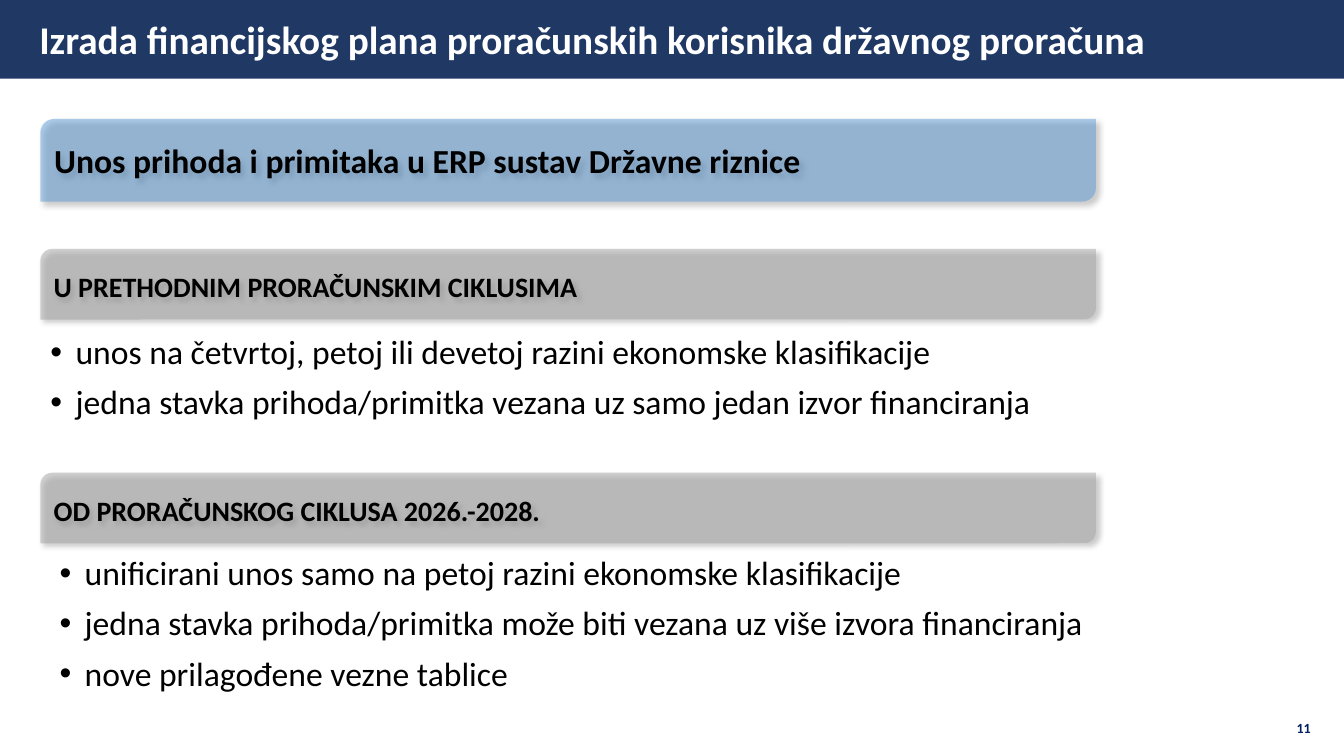
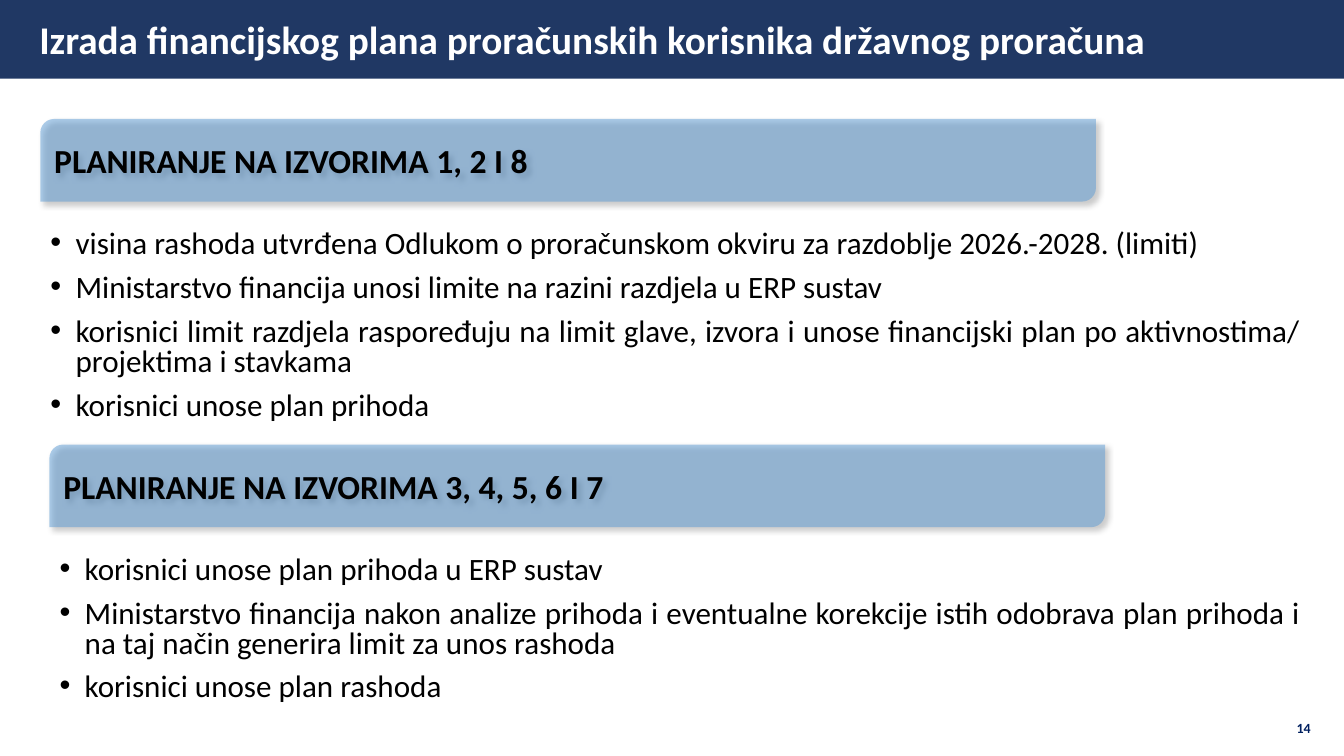
from dataclasses import dataclass

from lxml import etree
from pptx import Presentation
from pptx.dml.color import RGBColor
from pptx.enum.shapes import MSO_SHAPE
from pptx.enum.text import MSO_ANCHOR, MSO_AUTO_SIZE, PP_ALIGN
from pptx.oxml.ns import qn
from pptx.util import Inches, Pt

DIAG = MSO_SHAPE.ROUND_2_DIAG_RECTANGLE
LEFT, JUSTIFY = PP_ALIGN.LEFT, PP_ALIGN.JUSTIFY
MIDDLE, TOP = MSO_ANCHOR.MIDDLE, MSO_ANCHOR.TOP
FIXED = MSO_AUTO_SIZE.NONE
TWO_LISTS = 3


@dataclass(frozen=True)
class Theme:
    font: str = "Calibri"
    navy: str = "203864"
    page: str = "002060"
    blue: str = "5B9BD5"
    grey: str = "A5A5A5"
    white: str = "FFFFFF"
    black: str = "000000"
    title_size: float = 28
    head_size: float = 24
    sub_size: float = 20
    list_size: float = 24
    tight_size: float = 22.2
    page_size: float = 10


TITLE = "Izrada financijskog plana proračunskih korisnika državnog proračuna"


class Deck:
    def __init__(self, theme):
        self.theme = theme
        self.prs = Presentation()
        self.prs.slide_width = Inches(13.33)
        self.prs.slide_height = Inches(7.5)
        self.slide = None

    def start(self, page):
        """Add a slide with its title band and page number."""
        layout = self.prs.slide_layouts[TWO_LISTS]
        self.slide = self.prs.slides.add_slide(layout)
        self.title()
        self.number(page)

    def place(self, shape, x, y, w, h):
        shape.left, shape.top = Inches(x), Inches(y)
        shape.width, shape.height = Inches(w), Inches(h)

    def paint(self, shape, color):
        shape.fill.solid()
        shape.fill.fore_color.rgb = RGBColor.from_string(color)
        shape.line.fill.background()

    def label(self, para, text, size, color, bold=False, align=LEFT, space=1.0):
        para.alignment = align
        para.line_spacing = space
        run = para.add_run()
        run.text = text
        font = run.font
        font.name, font.size, font.bold = self.theme.font, Pt(size), bold
        font.color.rgb = RGBColor.from_string(color)

    def title(self):
        t = self.theme
        band = self.slide.shapes.title
        self.place(band, 0, 0, 13.33, 0.78)
        self.paint(band, t.navy)
        frame = band.text_frame
        frame.auto_size = FIXED
        frame.vertical_anchor = MIDDLE
        frame.margin_left = Inches(0.39)
        self.label(frame.paragraphs[0], TITLE, t.title_size, t.white, bold=True)

    def number(self, page):
        t = self.theme
        box = self.slide.shapes.add_textbox(
            Inches(12.86), Inches(7.16), Inches(0.22), Inches(0.15))
        frame = box.text_frame
        frame.word_wrap = True
        frame.margin_left = frame.margin_right = 0
        frame.margin_top = frame.margin_bottom = 0
        self.label(frame.paragraphs[0], str(page), t.page_size, t.page,
                   bold=True, space=0.9)

    def bar(self, text, x, y, h, color, size, align=LEFT, space=1.0):
        """Draw a half-clear heading bar with a soft shadow."""
        shape = self.slide.shapes.add_shape(
            DIAG, Inches(x), Inches(y), Inches(10.47), Inches(h))
        self.paint(shape, color)
        tint = shape.element.spPr.find(qn("a:solidFill")).find(qn("a:srgbClr"))
        self.fade(tint, 50)
        self.shade(shape)
        frame = shape.text_frame
        frame.word_wrap = True
        frame.vertical_anchor = MIDDLE
        self.label(frame.paragraphs[0], text, size, self.theme.black,
                   bold=True, align=align, space=space)

    def head(self, text, x, y):
        self.bar(text, x, y, 0.82, self.theme.blue, self.theme.head_size)

    def sub(self, text, y):
        self.bar(text, 0.4, y, 0.7, self.theme.grey, self.theme.sub_size,
                 JUSTIFY, 1.15)

    def fade(self, tint, share):
        etree.SubElement(tint, qn("a:alpha")).set("val", str(share * 1000))

    def shade(self, shape):
        shape.shadow.inherit = False
        effects = shape.element.spPr.find(qn("a:effectLst"))
        cast = etree.SubElement(effects, qn("a:outerShdw"))
        cast.set("blurRad", str(Pt(4)))
        cast.set("dist", str(Pt(3)))
        cast.set("dir", str(45 * 60000))
        cast.set("algn", "tl")
        cast.set("rotWithShape", "0")
        tint = etree.SubElement(cast, qn("a:srgbClr"))
        tint.set("val", self.theme.black)
        self.fade(tint, 40)

    def list(self, slot, items, x, y, w, h, tight=False):
        """Fill body placeholder 1 or 2; tight lists are smaller and justified."""
        t = self.theme
        body = self.slide.placeholders[slot]
        self.place(body, x, y, w, h)
        frame = body.text_frame
        frame.auto_size = FIXED
        frame.vertical_anchor = TOP
        size, align, space = ((t.tight_size, JUSTIFY, 0.8) if tight
                              else (t.list_size, LEFT, 0.9))
        for i, item in enumerate(items):
            para = frame.add_paragraph() if i else frame.paragraphs[0]
            self.label(para, item, size, t.black, align=align, space=space)
            para.space_before = Pt(10)
            self.bullet(para)

    def bullet(self, para):
        props = para._p.get_or_add_pPr()
        props.set("marL", str(Inches(0.25)))
        props.set("indent", str(-Inches(0.25)))
        etree.SubElement(props, qn("a:buFont")).set("typeface", "Arial")
        etree.SubElement(props, qn("a:buChar")).set("char", "•")


def entry(deck):
    deck.start(11)
    deck.head("Unos prihoda i primitaka u ERP sustav Državne riznice", 0.4, 1.18)
    deck.sub("U PRETHODNIM PRORAČUNSKIM CIKLUSIMA", 2.47)
    deck.list(1, [
        "unos na četvrtoj, petoj ili devetoj razini ekonomske klasifikacije",
        "jedna stavka prihoda/primitka vezana uz samo jedan izvor financiranja",
    ], 0.4, 3.28, 12.51, 1.04)
    deck.sub("OD PRORAČUNSKOG CIKLUSA 2026.-2028.", 4.69)
    deck.list(2, [
        "unificirani unos samo na petoj razini ekonomske klasifikacije",
        "jedna stavka prihoda/primitka može biti vezana uz više izvora financiranja",
        "nove prilagođene vezne tablice",
    ], 0.49, 5.47, 12.51, 1.54)


def sources(deck):
    deck.start(14)
    deck.head("PLANIRANJE NA IZVORIMA 1, 2 I 8", 0.4, 1.18)
    deck.list(1, [
        "visina rashoda utvrđena Odlukom o proračunskom okviru za razdoblje "
        "2026.-2028. (limiti)",
        "Ministarstvo financija unosi limite na razini razdjela u ERP sustav",
        "korisnici limit razdjela raspoređuju na limit glave, izvora i unose "
        "financijski plan po aktivnostima/ projektima i stavkama",
        "korisnici unose plan prihoda",
    ], 0.4, 2.24, 12.6, 2.08, tight=True)
    deck.head("PLANIRANJE NA IZVORIMA 3, 4, 5, 6 I 7", 0.49, 4.41)
    deck.list(2, [
        "korisnici unose plan prihoda u ERP sustav",
        "Ministarstvo financija nakon analize prihoda i eventualne korekcije "
        "istih odobrava plan prihoda i na taj način generira limit za unos rashoda",
        "korisnici unose plan rashoda",
    ], 0.49, 5.47, 12.51, 1.68, tight=True)


def main():
    deck = Deck(Theme())
    entry(deck)
    sources(deck)
    deck.prs.save("out.pptx")


if __name__ == "__main__":
    main()
